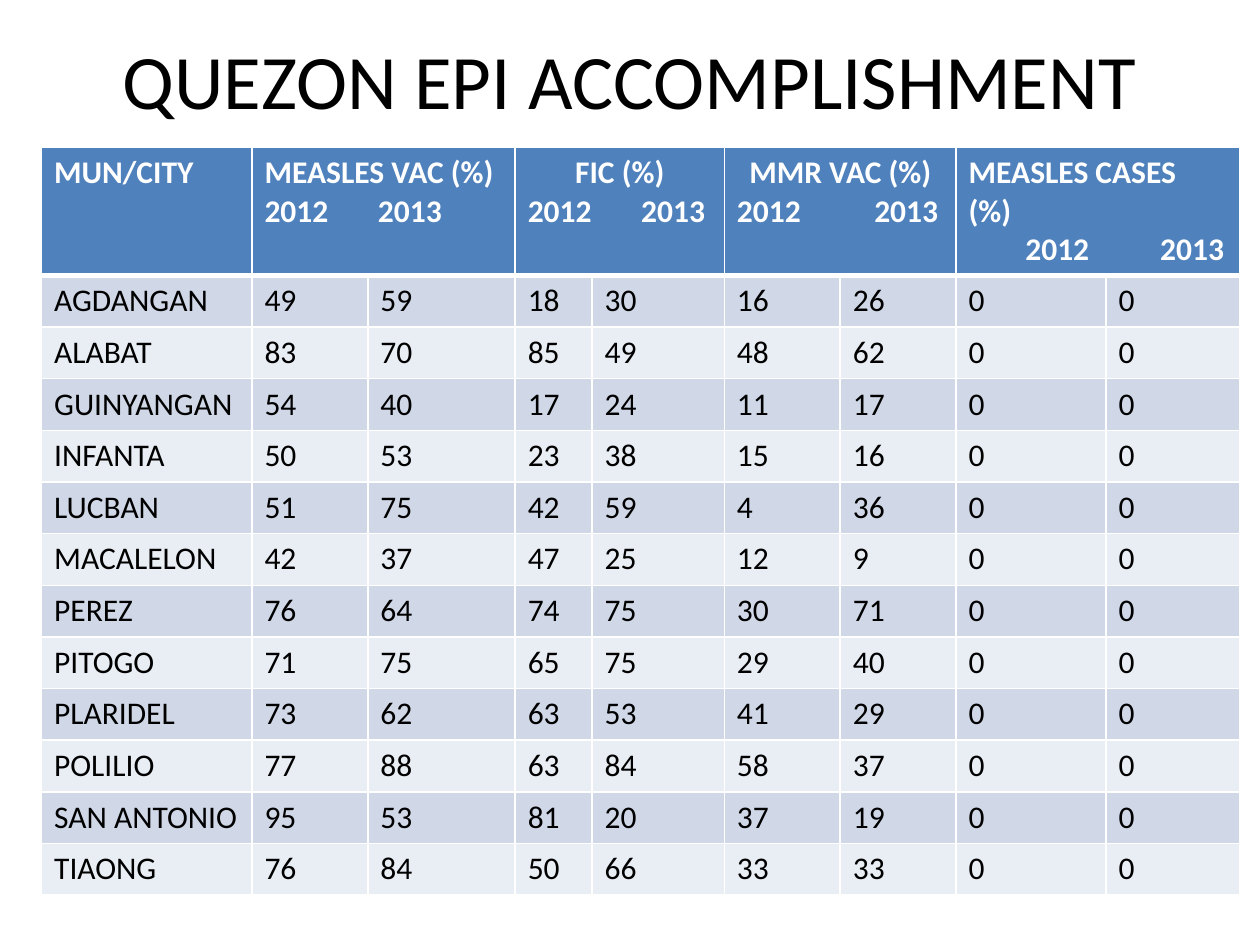
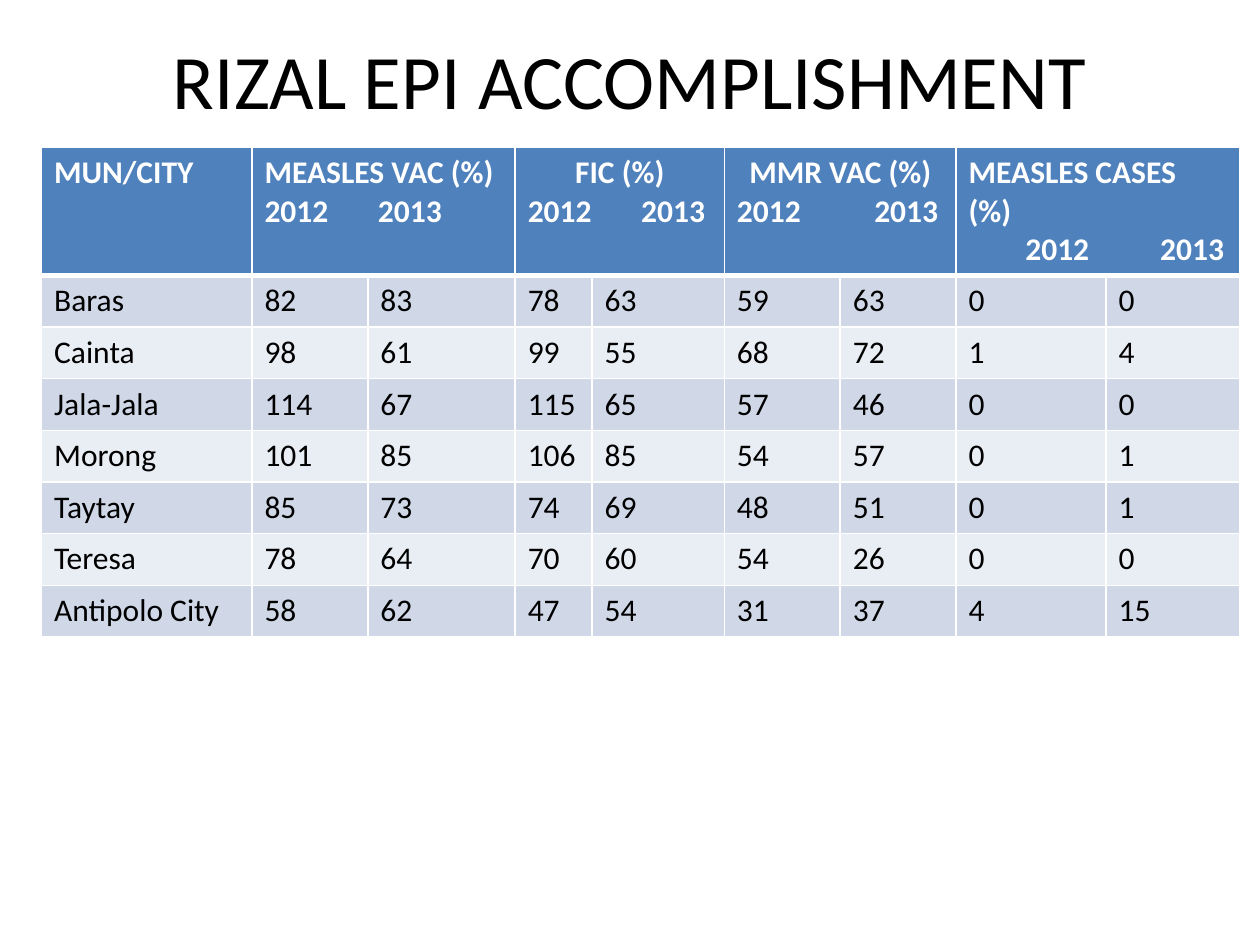
from lxml.etree import SubElement
from pptx import Presentation
from pptx.dml.color import RGBColor
from pptx.enum.text import MSO_ANCHOR as Anchor, PP_ALIGN as Align
from pptx.oxml.ns import qn
from pptx.util import Inches, Pt

FONT = "Calibri"
BLACK, WHITE, HEADER_BLUE = "000000", "FFFFFF", "4F81BD"
BANDS = ("D0D8E8", "E9EDF4")
TITLE_BOX = (0.5, 0, 9, 1.25)
TABLE_BOX = (0.33, 1.17, 9.5)
COLUMN_WIDTHS = (1.67, 0.92, 1.17, 0.61, 1.05, 0.92, 0.92, 1.19, 1.06)
HEADER_HEIGHT, ROW_HEIGHT = 1.0, 0.41

INDICATORS = (
    (("MEASLES VAC (%)",), Align.LEFT, "2012\t2013", (0.9,)),
    (("FIC (%)",), Align.CENTER, "2012\t2013", (0.9,)),
    (("MMR VAC (%)",), Align.CENTER, "2012\t2013", (1.09,)),
    (("MEASLES CASES", "(%)"), Align.LEFT, "\t2012\t2013", (0.45, 1.52)),
)

QUEZON = (
    ("AGDANGAN", 49, 59, 18, 30, 16, 26, 0, 0),
    ("ALABAT", 83, 70, 85, 49, 48, 62, 0, 0),
    ("GUINYANGAN", 54, 40, 17, 24, 11, 17, 0, 0),
    ("INFANTA", 50, 53, 23, 38, 15, 16, 0, 0),
    ("LUCBAN", 51, 75, 42, 59, 4, 36, 0, 0),
    ("MACALELON", 42, 37, 47, 25, 12, 9, 0, 0),
    ("PEREZ", 76, 64, 74, 75, 30, 71, 0, 0),
    ("PITOGO", 71, 75, 65, 75, 29, 40, 0, 0),
    ("PLARIDEL", 73, 62, 63, 53, 41, 29, 0, 0),
    ("POLILIO", 77, 88, 63, 84, 58, 37, 0, 0),
    ("SAN ANTONIO", 95, 53, 81, 20, 37, 19, 0, 0),
    ("TIAONG", 76, 84, 50, 66, 33, 33, 0, 0),
)
RIZAL = (
    ("Baras", 82, 83, 78, 63, 59, 63, 0, 0),
    ("Cainta", 98, 61, 99, 55, 68, 72, 1, 4),
    ("Jala-Jala", 114, 67, 115, 65, 57, 46, 0, 0),
    ("Morong", 101, 85, 106, 85, 54, 57, 0, 1),
    ("Taytay", 85, 73, 74, 69, 48, 51, 0, 1),
    ("Teresa", 78, 64, 70, 60, 54, 26, 0, 0),
    ("Antipolo City", 58, 62, 47, 54, 31, 37, 4, 15),
)


def rgb(color):
    return RGBColor.from_string(color)


def add_run(paragraph, text, size=18, color=BLACK, bold=False):
    run = paragraph.add_run()
    run.text = text
    run.font.name = FONT
    run.font.size = Pt(size)
    run.font.bold = bold
    run.font.color.rgb = rgb(color)


def add_tab_stops(paragraph, positions):
    stops = SubElement(paragraph._p.get_or_add_pPr(), qn("a:tabLst"))
    for position in positions:
        SubElement(stops, qn("a:tab"), pos=str(Inches(position)), algn="l")


def style_cell(cell, fill, top=1, bottom=1):
    properties = cell._tc.get_or_add_tcPr()
    for side, width in (("L", 1), ("R", 1), ("T", top), ("B", bottom)):
        line = SubElement(properties, qn(f"a:ln{side}"), w=str(Pt(width)))
        SubElement(SubElement(line, qn("a:solidFill")), qn("a:srgbClr"), val=WHITE)
    cell.fill.solid()
    cell.fill.fore_color.rgb = rgb(fill)


def fill_header(table):
    for column in range(len(COLUMN_WIDTHS)):
        style_cell(table.cell(0, column), HEADER_BLUE, bottom=3)
    add_run(table.cell(0, 0).text_frame.paragraphs[0], "MUN/CITY", color=WHITE, bold=True)
    for index, (heading_lines, align, years, stops) in enumerate(INDICATORS):
        column = 1 + 2 * index
        cell = table.cell(0, column)
        cell.merge(table.cell(0, column + 1))
        heading = cell.text_frame.paragraphs[0]
        heading.alignment = align
        for number, text in enumerate(heading_lines):
            if number:
                heading.add_line_break()
            add_run(heading, text, color=WHITE, bold=True)
        year_line = cell.text_frame.add_paragraph()
        add_tab_stops(year_line, stops)
        add_run(year_line, years, color=WHITE, bold=True)


def add_coverage_table(slide, box, towns):
    left, top, width = box
    height = HEADER_HEIGHT + ROW_HEIGHT * len(towns)
    table = slide.shapes.add_table(
        len(towns) + 1, len(COLUMN_WIDTHS),
        Inches(left), Inches(top), Inches(width), Inches(height)).table
    for column, column_width in zip(table.columns, COLUMN_WIDTHS):
        column.width = Inches(column_width)
    for index, row in enumerate(table.rows):
        row.height = Inches(ROW_HEIGHT if index else HEADER_HEIGHT)
    fill_header(table)
    for row, town in enumerate(towns, start=1):
        for column, value in enumerate(town):
            cell = table.cell(row, column)
            style_cell(cell, BANDS[(row - 1) % 2], top=3 if row == 1 else 1)
            add_run(cell.text_frame.paragraphs[0], str(value))


def set_title(slide, box, text):
    title = slide.shapes.title
    title.left, title.top, title.width, title.height = map(Inches, box)
    title.text_frame.vertical_anchor = Anchor.MIDDLE
    paragraph = title.text_frame.paragraphs[0]
    paragraph.alignment = Align.CENTER
    add_run(paragraph, text, size=44)


def add_province_slide(deck, province, towns):
    slide = deck.slides.add_slide(deck.slide_layouts[5])
    slide.background.fill.solid()
    slide.background.fill.fore_color.rgb = rgb(WHITE)
    set_title(slide, TITLE_BOX, f"{province} EPI ACCOMPLISHMENT")
    add_coverage_table(slide, TABLE_BOX, towns)


def main():
    deck = Presentation()
    deck.slide_width, deck.slide_height = Inches(10), Inches(7.5)
    add_province_slide(deck, "QUEZON", QUEZON)
    add_province_slide(deck, "RIZAL", RIZAL)
    deck.save("out.pptx")


if __name__ == "__main__":
    main()
